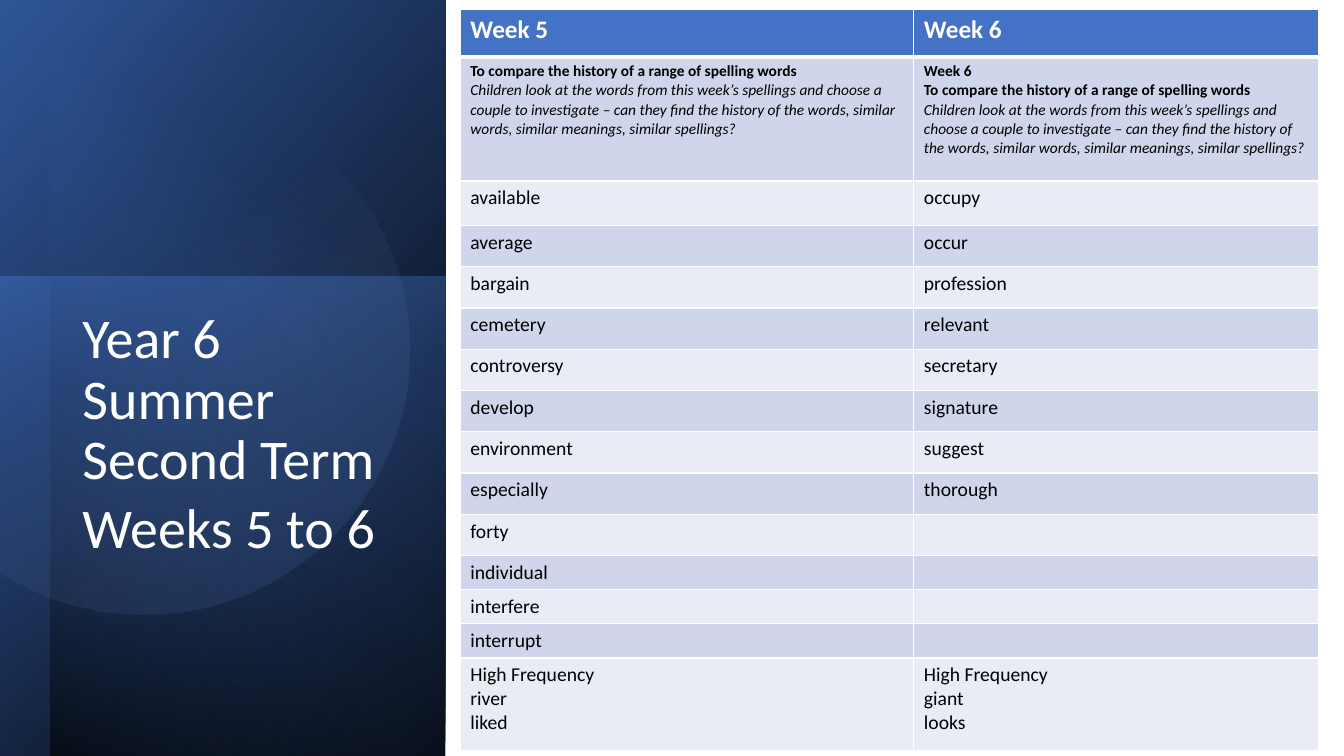
import math

import pptx
import pptx.dml.color
import pptx.enum.shapes
import pptx.oxml.ns
import pptx.oxml.xmlchemy
import pptx.util
from lxml import etree
from pptx.util import Cm, Pt

RGBColor = pptx.dml.color.RGBColor
qn = pptx.oxml.ns.qn

BLACK = RGBColor(0x00, 0x00, 0x00)
WHITE = RGBColor(0xFF, 0xFF, 0xFF)
BLUE = RGBColor(0x44, 0x72, 0xC4)
DEEP_BLUE = RGBColor(0x2F, 0x55, 0x97)
NAVY = RGBColor(0x20, 0x38, 0x64)
PALE_BLUE = RGBColor(0x8F, 0xAA, 0xDC)
BAND_DARK = RGBColor(0xCF, 0xD5, 0xEA)
BAND_LIGHT = RGBColor(0xE9, 0xEB, 0xF5)
FONT = "Calibri"


def fade(shape, angle, stops):
    """Fill with a gradient; each stop is (position, colour, opacity in percent)."""
    shape.shadow.inherit = False
    shape.line.fill.background()
    shape.fill.gradient()
    shape.fill.gradient_angle = angle
    for stop, (position, colour, opacity) in zip(shape.fill.gradient_stops, stops):
        stop.position = position
        stop.color.rgb = colour
    colours = shape._element.spPr.findall(".//" + qn("a:srgbClr"))
    for colour_element, (_, _, opacity) in zip(colours, stops):
        if opacity < 100:
            alpha = etree.SubElement(colour_element, qn("a:alpha"))
            alpha.set("val", str(opacity * 1000))


def style(paragraph, size, colour, bold=False, italic=False):
    font = paragraph.font
    font.name, font.size, font.bold, font.italic = FONT, Pt(size), bold, italic
    font.color.rgb = colour


presentation = pptx.Presentation()
presentation.slide_width = Cm(33.87)
presentation.slide_height = Cm(19.05)
slide = presentation.slides.add_slide(presentation.slide_layouts[6])

# Left panel: three turned rectangles
panels = [
    (-3.94, 3.94, 19.1, 11.23, 90, True, 310, [(0, BLACK, 100), (1, DEEP_BLUE, 100)]),
    (-0.43, 7.39, 12.09, 11.23, 270, False, 190, [(0, BLUE, 50), (1, NAVY, 0)]),
    (-3.28, 4.55, 19.05, 9.96, 270, True, 220, [(0, BLACK, 59), (0.69, BLUE, 0)]),
]
for left, top, width, height, turn, flipped, angle, stops in panels:
    panel = slide.shapes.add_shape(
        pptx.enum.shapes.MSO_SHAPE.RECTANGLE, Cm(left), Cm(top), Cm(width), Cm(height))
    panel.rotation = turn
    if flipped:
        panel._element.spPr.xfrm.set("flipH", "1")
    fade(panel, angle, stops)

# Circle cut off by the left edge of the slide
center_x, center_y, radius = 3.63, 8.81, 6.68
cut = math.acos(-center_x / radius)
steps = 120
rim = []
for step in range(steps + 1):
    theta = -cut + 2 * cut * step / steps
    rim.append((Cm(center_x + radius * math.cos(theta)),
                Cm(center_y + radius * math.sin(theta))))
outline = slide.shapes.build_freeform(*rim[0])
outline.add_line_segments(rim[1:], close=True)
fade(outline.convert_to_shape(), 310, [(0.39, PALE_BLUE, 0), (1, DEEP_BLUE, 26)])

# Title
title = slide.shapes.add_textbox(Cm(1.83), Cm(7.7), Cm(8), Cm(8.53)).text_frame
title.word_wrap = True
title.text = "Year 6 Summer Second Term\nWeeks 5 to 6"
for paragraph in title.paragraphs:
    style(paragraph, 40, WHITE)
    paragraph.line_spacing = 0.9
    paragraph.space_after = Pt(6)

# Spelling table
goal = "To compare the history of a range of spelling words"
task = ("Children look at the words from this week’s spellings and choose a couple to "
        "investigate – can they find the history of the words, similar words, "
        "similar meanings, similar spellings?")
week_5 = ["Week 5", f"{goal}\n{task}", "available", "average", "bargain", "cemetery",
          "controversy", "develop", "environment", "especially", "forty", "individual",
          "interfere", "interrupt", "High Frequency\nriver\nliked"]
week_6 = ["Week 6", f"Week 6\n{goal}\n{task}", "occupy", "occur", "profession", "relevant",
          "secretary", "signature", "suggest", "thorough", "", "", "", "",
          "High Frequency\ngiant\nlooks"]
row_heights = [1.21, 3.12, 1.12] + [1.04] * 8 + [0.86] * 3 + [2.34]

table = slide.shapes.add_table(
    len(week_5), 2, Cm(11.6), Cm(0.23), Cm(21.64), Cm(sum(row_heights))).table
for column, width in zip(table.columns, (11.43, 10.21)):
    column.width = Cm(width)
for row, height in zip(table.rows, row_heights):
    row.height = Cm(height)

for column_index, words in enumerate((week_5, week_6)):
    for row_index, text in enumerate(words):
        cell = table.cell(row_index, column_index)
        cell.text = text
        for paragraph in cell.text_frame.paragraphs:
            if row_index == 0:
                style(paragraph, 18, WHITE, bold=True)
            elif row_index == 1:
                is_task = paragraph.text == task
                style(paragraph, 11, BLACK, bold=not is_task, italic=is_task)
            else:
                style(paragraph, 14, BLACK)
            if not text:
                end = etree.SubElement(paragraph._p, qn("a:endParaRPr"))
                end.set("sz", "1400")

        properties = cell._tc.get_or_add_tcPr()
        for side in ("lnL", "lnR", "lnT", "lnB"):
            under_header = (row_index, side) in ((0, "lnB"), (1, "lnT"))
            border = etree.SubElement(properties, qn(f"a:{side}"))
            border.set("w", str(Pt(3 if under_header else 1)))
            border_fill = etree.SubElement(border, qn("a:solidFill"))
            etree.SubElement(border_fill, qn("a:srgbClr")).set("val", str(WHITE))
        cell.fill.solid()
        if row_index == 0:
            cell.fill.fore_color.rgb = BLUE
        else:
            cell.fill.fore_color.rgb = BAND_DARK if row_index % 2 else BAND_LIGHT

presentation.save("out.pptx")
